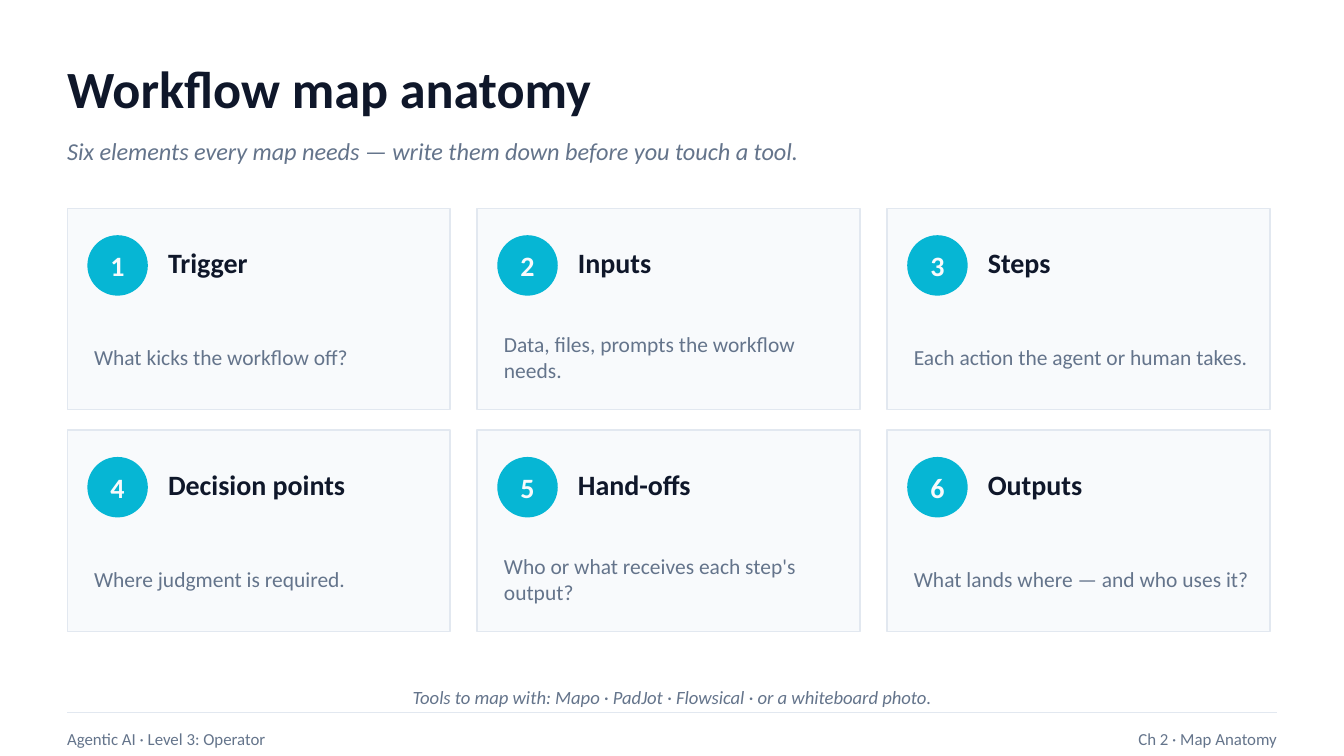
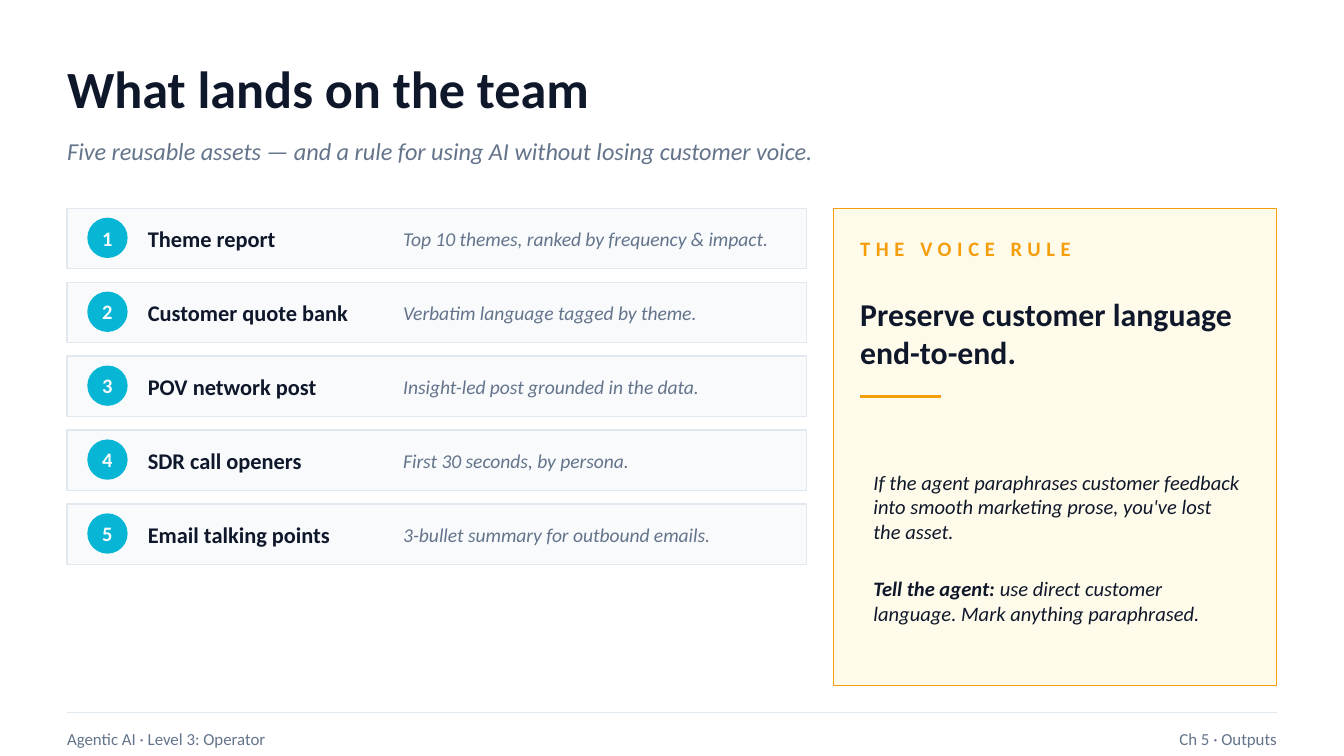
from dataclasses import dataclass

from pptx import Presentation
from pptx import util as u
from pptx.dml.color import RGBColor
from pptx.enum import shapes, text
from pptx.oxml.ns import qn
from lxml import etree


@dataclass(frozen=True)
class Theme:
    font: str = "Calibri"
    ink: str = "0F172A"
    muted: str = "64748B"
    panel: str = "F8FAFC"
    rule: str = "E2E8F0"
    accent: str = "06B6D4"
    amber: str = "F59E0B"
    cream: str = "FFFBEB"
    hairline: float = 0.75

    def style(self, size, color=None, **flags):
        return {"name": self.font, "size": u.Pt(size),
                "color": color or self.ink, **flags}


THEME = Theme()
TITLE = THEME.style(28, bold=True)
SUBTITLE = THEME.style(13, THEME.muted, italic=True)
FOOTER = THEME.style(9, THEME.muted)
NOTE = THEME.style(10, THEME.muted, italic=True)
CARD_HEAD = THEME.style(15, bold=True)
CARD_BODY = THEME.style(11.5, THEME.muted)
ROW_HEAD = THEME.style(12, bold=True)
ROW_BODY = THEME.style(10.5, THEME.muted, italic=True)
RULE_LABEL = THEME.style(11, THEME.amber, bold=True)
RULE_HEAD = THEME.style(17, bold=True)
RULE_BODY = THEME.style(11, italic=True)
RULE_LEAD = {**RULE_BODY, "bold": True}

LEFT, CENTER, RIGHT = (text.PP_ALIGN.LEFT, text.PP_ALIGN.CENTER,
                       text.PP_ALIGN.RIGHT)


@dataclass(frozen=True)
class Box:
    x: float
    y: float
    w: float
    h: float

    def inner(self, dx, dy, w, h):
        """A box offset from this one's top left corner."""
        return Box(self.x + dx, self.y + dy, w, h)

    def emu(self):
        return [u.Inches(round(v, 2)) for v in (self.x, self.y, self.w, self.h)]


CONTENT_X, CONTENT_Y, CONTENT_W = 0.5, 1.55, 9


def set_attrs(obj, values):
    for name, value in values.items():
        setattr(obj, name, value)


def add_run(p, words, style):
    r = p.add_run()
    r.text = words
    set_attrs(r.font, {k: v for k, v in style.items() if k != "color"})
    r.font.color.rgb = RGBColor.from_string(style["color"])
    return r


def fill_text(sp, words, style, align=LEFT):
    """Put one vertically centred paragraph in a shape with no margins."""
    tf = sp.text_frame
    set_attrs(tf, {"word_wrap": True, "auto_size": text.MSO_AUTO_SIZE.NONE,
                   "vertical_anchor": text.MSO_ANCHOR.MIDDLE,
                   "margin_left": 0, "margin_right": 0,
                   "margin_top": 0, "margin_bottom": 0})
    p = tf.paragraphs[0]
    p.alignment = align
    return add_run(p, words, style)


def add_text(slide, box, words, style, align=LEFT):
    return fill_text(slide.shapes.add_textbox(*box.emu()), words, style, align)


def add_shape(slide, kind, box, fill, line=None):
    sp = slide.shapes.add_shape(kind, *box.emu())
    sp.shadow.inherit = False
    sp.fill.solid()
    sp.fill.fore_color.rgb = RGBColor.from_string(fill)
    if line:
        sp.line.color.rgb = RGBColor.from_string(line)
        sp.line.width = u.Pt(THEME.hairline)
    else:
        sp.line.fill.background()
    return sp


def add_panel(slide, box, fill=THEME.panel, line=THEME.rule):
    return add_shape(slide, shapes.MSO_SHAPE.RECTANGLE, box, fill, line)


def add_badge(slide, box, number, size):
    sp = add_shape(slide, shapes.MSO_SHAPE.OVAL, box, THEME.accent)
    fill_text(sp, str(number), THEME.style(size, THEME.panel, bold=True), CENTER)


def add_rule(slide, x, y, w, color, width):
    """Draw a horizontal line."""
    ln = slide.shapes.add_connector(
        shapes.MSO_CONNECTOR.STRAIGHT,
        *(u.Inches(v) for v in (x, y, x + w, y)))
    ln.line.color.rgb = RGBColor.from_string(color)
    ln.line.width = u.Pt(width)
    etree.SubElement(ln._element.spPr, qn("a:effectLst"))


def add_header(slide, box, title, subtitle):
    sp = slide.shapes.title
    places = ("left", "top", "width", "height")
    set_attrs(sp, dict(zip(places, box.inner(0, 0, box.w, 0.6).emu())))
    fill_text(sp, title, TITLE)
    add_text(slide, box.inner(0, 0.6, box.w, 0.35), subtitle, SUBTITLE)


def add_footer(slide, box, chapter):
    add_rule(slide, box.x, box.y, box.w, THEME.rule, THEME.hairline)
    add_text(slide, box.inner(0, 0.05, 5, 0.3),
             "Agentic AI · Level 3: Operator", FOOTER)
    add_text(slide, box.inner(5, 0.05, 4, 0.3), chapter, FOOTER, RIGHT)


def add_base_slide(prs, title, subtitle, chapter):
    """Add a slide with the shared header and footer."""
    slide = prs.slides.add_slide(prs.slide_layouts[5])
    add_header(slide, Box(CONTENT_X, 0.35, CONTENT_W, 0.95), title, subtitle)
    add_footer(slide, Box(CONTENT_X, 5.3, CONTENT_W, 0.32), chapter)
    return slide


def add_card(slide, box, number, head, body):
    add_panel(slide, box)
    add_badge(slide, box.inner(0.15, 0.2, 0.45, 0.45), number, 15)
    add_text(slide, box.inner(0.75, 0.18, box.w - 0.9, 0.45), head, CARD_HEAD)
    add_text(slide, box.inner(0.2, 0.78, box.w - 0.35, 0.65), body, CARD_BODY)


def add_card_grid(slide, box, cards, columns=3, gap_x=0.2, gap_y=0.15):
    rows = -(-len(cards) // columns)
    w = (box.w - gap_x * (columns - 1)) / columns
    h = (box.h - gap_y * (rows - 1)) / rows
    for i, (head, body) in enumerate(cards):
        row, col = divmod(i, columns)
        card = box.inner(col * (w + gap_x), row * (h + gap_y), w, h)
        add_card(slide, card, i + 1, head, body)


def add_asset_row(slide, box, number, head, body):
    add_panel(slide, box)
    add_badge(slide, box.inner(0.15, 0.07, 0.3, 0.3), number, 11)
    add_text(slide, box.inner(0.6, 0.05, 1.85, 0.35), head, ROW_HEAD)
    add_text(slide, box.inner(2.5, 0.05, box.w - 2.55, 0.35), body, ROW_BODY)


def add_asset_list(slide, box, assets, row_h=0.45):
    pitch = (box.h - row_h) / (len(assets) - 1)
    for i, (head, body) in enumerate(assets):
        row = box.inner(0, i * pitch, box.w, row_h)
        add_asset_row(slide, row, i + 1, head, body)


def add_voice_rule(slide, box, label, head, paragraphs):
    add_panel(slide, box, THEME.cream, THEME.amber)
    r = add_text(slide, box.inner(0.2, 0.15, 3, 0.3), label, RULE_LABEL)
    r._r.get_or_add_rPr().set("spc", "300")
    add_text(slide, box.inner(0.2, 0.5, 2.95, 0.85), head, RULE_HEAD)
    add_rule(slide, box.x + 0.2, box.y + 1.4, 0.6, THEME.amber, 2)

    tf = slide.shapes.add_textbox(*box.inner(0.2, 1.55, 2.95, 1.95).emu()).text_frame
    set_attrs(tf, {"word_wrap": True, "vertical_anchor": text.MSO_ANCHOR.MIDDLE})
    for i, runs in enumerate(paragraphs):
        p = tf.add_paragraph() if i else tf.paragraphs[0]
        p.space_after = u.Pt(2)
        if i:
            p.space_before = u.Pt(15.5)
        for words, style in runs:
            add_run(p, words, style)


def anatomy_slide(prs):
    slide = add_base_slide(
        prs, "Workflow map anatomy",
        "Six elements every map needs — write them down before you touch a tool.",
        "Ch 2 · Map Anatomy")
    add_card_grid(slide, Box(CONTENT_X, CONTENT_Y, 8.95, 3.15), [
        ("Trigger", "What kicks the workflow off?"),
        ("Inputs", "Data, files, prompts the workflow needs."),
        ("Steps", "Each action the agent or human takes."),
        ("Decision points", "Where judgment is required."),
        ("Hand-offs", "Who or what receives each step's output?"),
        ("Outputs", "What lands where — and who uses it?"),
    ])
    add_text(slide, Box(CONTENT_X, 5.06, CONTENT_W, 0.25),
             "Tools to map with: Mapo · PadJot · Flowsical · or a whiteboard photo.",
             NOTE, CENTER)


def outputs_slide(prs):
    slide = add_base_slide(
        prs, "What lands on the team",
        "Five reusable assets — and a rule for using AI without losing customer voice.",
        "Ch 5 · Outputs")
    add_asset_list(slide, Box(CONTENT_X, CONTENT_Y, 5.5, 2.65), [
        ("Theme report", "Top 10 themes, ranked by frequency & impact."),
        ("Customer quote bank", "Verbatim language tagged by theme."),
        ("POV network post", "Insight-led post grounded in the data."),
        ("SDR call openers", "First 30 seconds, by persona."),
        ("Email talking points", "3-bullet summary for outbound emails."),
    ])
    add_voice_rule(
        slide, Box(6.2, CONTENT_Y, 3.3, 3.55),
        "THE VOICE RULE", "Preserve customer language end-to-end.", [
            [("If the agent paraphrases customer feedback into smooth "
              "marketing prose, you've lost the asset.", RULE_BODY)],
            [("Tell the agent: ", RULE_LEAD),
             ("use direct customer language. Mark anything paraphrased.",
              RULE_BODY)],
        ])


def main():
    prs = Presentation()
    prs.slide_width = u.Inches(10)
    prs.slide_height = u.Inches(10 * 9 / 16)
    anatomy_slide(prs)
    outputs_slide(prs)
    prs.save("out.pptx")


if __name__ == "__main__":
    main()
